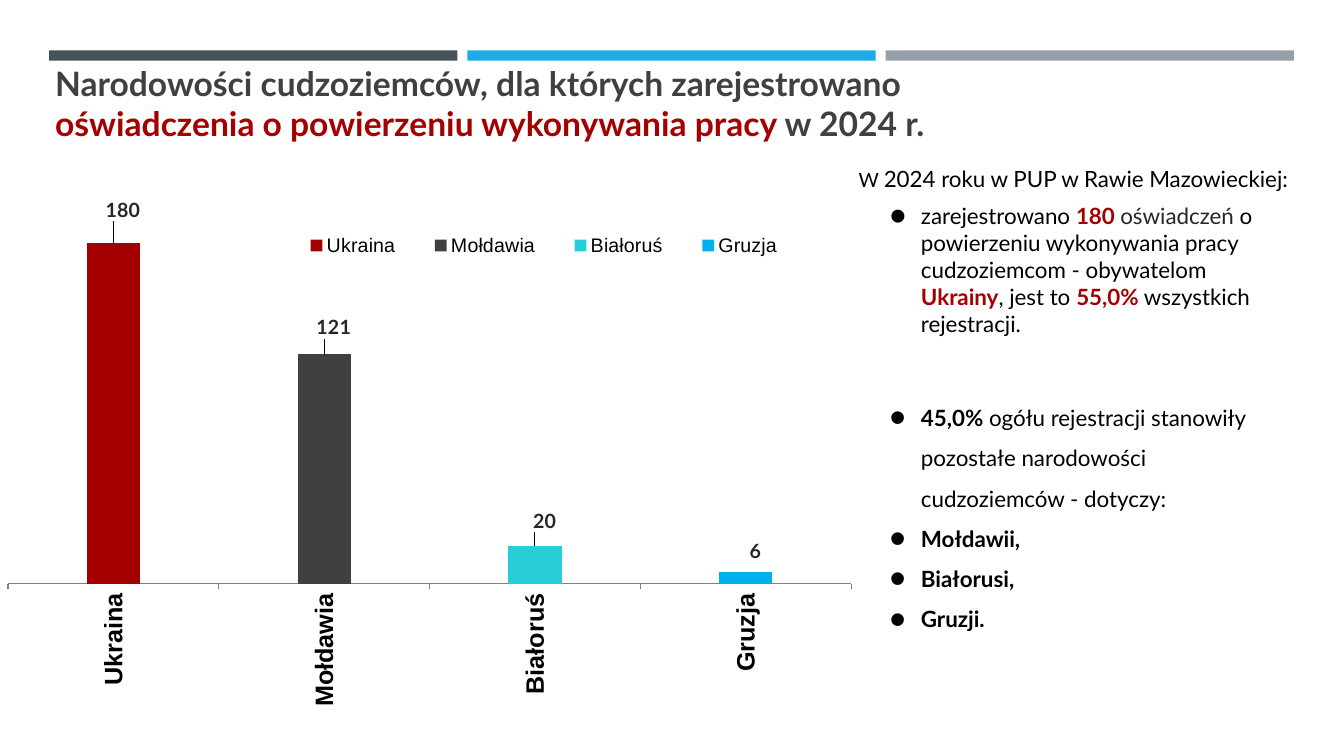
from lxml.etree import SubElement
from pptx import Presentation
from pptx.chart.data import CategoryChartData
from pptx.dml.color import RGBColor
from pptx.enum.chart import XL_CHART_TYPE, XL_LABEL_POSITION, XL_LEGEND_POSITION, XL_TICK_LABEL_POSITION, XL_TICK_MARK
from pptx.enum.shapes import MSO_SHAPE
from pptx.oxml import parse_xml
from pptx.oxml.ns import nsdecls, qn
from pptx.util import Cm, Pt

HUES = {"slate": "465359", "sky": "1CADE4", "steel": "969FA7", "red": "A40000",
        "grey": "404040", "ink": "262626", "black": "000000", "aqua": "27CED7",
        "blue": "00B0F0", "axis": "808080"}

# Runs: text, colour, bold, size
TITLE = [("Narodowości cudzoziemców, dla których zarejestrowano ", "grey", True, 24),
         ("oświadczenia o powierzeniu wykonywania pracy ", "red", True, 24),
         ("w 2024 r.", "grey", True, 24)]
INTRO = [("W ", "black", False, 14),
         ("2024 roku w PUP w Rawie Mazowieckiej:", "black", False, 16)]
FIRST = [("zarejestrowano ", "black", False, 16), ("180 ", "red", True, 16),
         ("oświadczeń ", "ink", False, 16),
         ("o powierzeniu wykonywania pracy cudzoziemcom - obywatelom ", "black", False, 16),
         ("Ukrainy", "red", True, 16), (", jest to ", "black", False, 16),
         ("55,0%", "red", True, 16), (" wszystkich rejestracji.", "black", False, 16)]
OTHERS = [("45,0%", "black", True, 16),
          (" ogółu rejestracji stanowiły pozostałe narodowości cudzoziemców - dotyczy:",
           "black", False, 16)]
LANDS = ["Mołdawii,", "Białorusi,", "Gruzji."]
# Paragraphs: runs, format, bullet size in percent (0 for none)
WIDE = {"line_spacing": 1.5}
NOTES = [(FIRST, {}, 214), (OTHERS, {"line_spacing": 1.5, "space_before": Pt(38.5)}, 207)]
NOTES += [([(land, "black", True, 16)], WIDE, 207) for land in LANDS]
# Boxes: left, top, width, height in cm, paragraphs
BOXES = [((1.14, 1.45, 22.56, 3.33), [(TITLE, {}, 0)]),
         ((22.17, 4.98, 10.08, 12.12), NOTES),
         ((21.39, 4.04, 15.32, 0.94), [(INTRO, {}, 0)])]
# Bars: nation, value, colour, label lift as a share of chart height
BARS = [("Ukraina", 180, "red", 0.03), ("Mołdawia", 121, "grey", 0.02),
        ("Białoruś", 20, "aqua", 0.016), ("Gruzja", 6, "blue", 0.01)]
BANDS = ["slate", "sky", "steel"]


def hue(name):
    return RGBColor.from_string(HUES[name])


def style(item, form):
    for key, value in form.items():
        setattr(item, key, value)


def paint(font, name, color, bold, size):
    style(font, {"name": name, "bold": bold, "size": Pt(size)})
    font.color.rgb = hue(color)


def layout(**parts):
    """Manual chart layout from its element names and values."""
    body = "".join(f'<c:{key} val="{value}"/>' for key, value in parts.items())
    return parse_xml(f'<c:layout {nsdecls("c")}><c:manualLayout>{body}</c:manualLayout></c:layout>')


def bullet(para, share):
    prop = para._p.get_or_add_pPr()
    prop.set("marL", str(Cm(0.79)))
    prop.set("indent", str(-Cm(0.79)))
    for tag, key, value in [("a:buSzPct", "val", str(share * 1000)),
                            ("a:buFont", "typeface", "Arial"), ("a:buChar", "char", "•")]:
        SubElement(prop, qn(tag)).set(key, value)


def write(slide, place, paras):
    frame = slide.shapes.add_textbox(*map(Cm, place)).text_frame
    frame.word_wrap = True
    for spot, (runs, form, share) in enumerate(paras):
        para = frame.add_paragraph() if spot else frame.paragraphs[0]
        if share:
            bullet(para, share)
        style(para, form)
        for text, color, bold, size in runs:
            run = para.add_run()
            run.text = text
            paint(run.font, "Lato", color, bold, size)


def plot(slide):
    data = CategoryChartData(number_format="0")
    data.categories = [bar[0] for bar in BARS]
    data.add_series("Series 1", [bar[1] for bar in BARS])
    chart = slide.shapes.add_chart(XL_CHART_TYPE.COLUMN_CLUSTERED, Cm(0.18), Cm(4.19),
                                   Cm(22), Cm(14.25), data).chart
    style(chart, {"has_title": False, "has_legend": True})
    paint(chart.font, "Lato", "black", False, 18)
    legend = chart.legend
    style(legend, {"position": XL_LEGEND_POSITION.TOP, "include_in_layout": False})
    paint(legend.font, "Arial", "black", False, 14)
    legend._element.find(qn("c:legendPos")).addnext(
        layout(xMode="edge", yMode="edge", x=0.31, y=0.1, w=0.61, h=0.08))

    style(chart.value_axis, {"visible": False, "has_major_gridlines": False,
                             "minimum_scale": 0, "maximum_scale": 200})
    axis = chart.category_axis
    style(axis, {"major_tick_mark": XL_TICK_MARK.OUTSIDE, "has_major_gridlines": False,
                 "tick_label_position": XL_TICK_LABEL_POSITION.LOW})
    axis.format.line.color.rgb = hue("axis")
    paint(axis.tick_labels.font, "Arial", "black", True, 18)
    axis._element.find(qn("c:txPr")).find(qn("a:bodyPr")).set("rot", "-5400000")

    area = chart._chartSpace.chart.plotArea
    for old in area.findall(qn("c:layout")):
        area.remove(old)
    area.insert(0, layout(layoutTarget="inner", xMode="edge", yMode="edge",
                          x=0.001, y=0.068, w=0.966, h=0.67))
    style(chart.plots[0], {"gap_width": 297, "vary_by_categories": True})
    points = chart.plots[0].series[0].points
    for spot, (_, _, color, lift) in enumerate(BARS):
        fill = points[spot].format.fill
        fill.solid()
        fill.fore_color.rgb = hue(color)
        label = points[spot].data_label
        paint(label.font, "Lato", "ink", True, 14)
        label.position = XL_LABEL_POSITION.OUTSIDE_END
        mark = label._dLbl
        mark.find(qn("c:idx")).addnext(layout(x=0.011, y=-lift))


def main():
    deck = Presentation()
    style(deck, {"slide_width": Cm(33.87), "slide_height": Cm(19.05)})
    slide = deck.slides.add_slide(deck.slide_layouts[6])
    for spot, color in enumerate(BANDS):
        band = slide.shapes.add_shape(MSO_SHAPE.RECTANGLE, Cm(1.24 + 10.54 * spot), Cm(1.27),
                                      Cm(10.29), Cm(0.26))
        band.shadow.inherit = False
        band.fill.solid()
        band.fill.fore_color.rgb = hue(color)
        band.line.fill.background()
    plot(slide)
    for place, paras in BOXES:
        write(slide, place, paras)
    deck.save("out.pptx")


if __name__ == "__main__":
    main()
